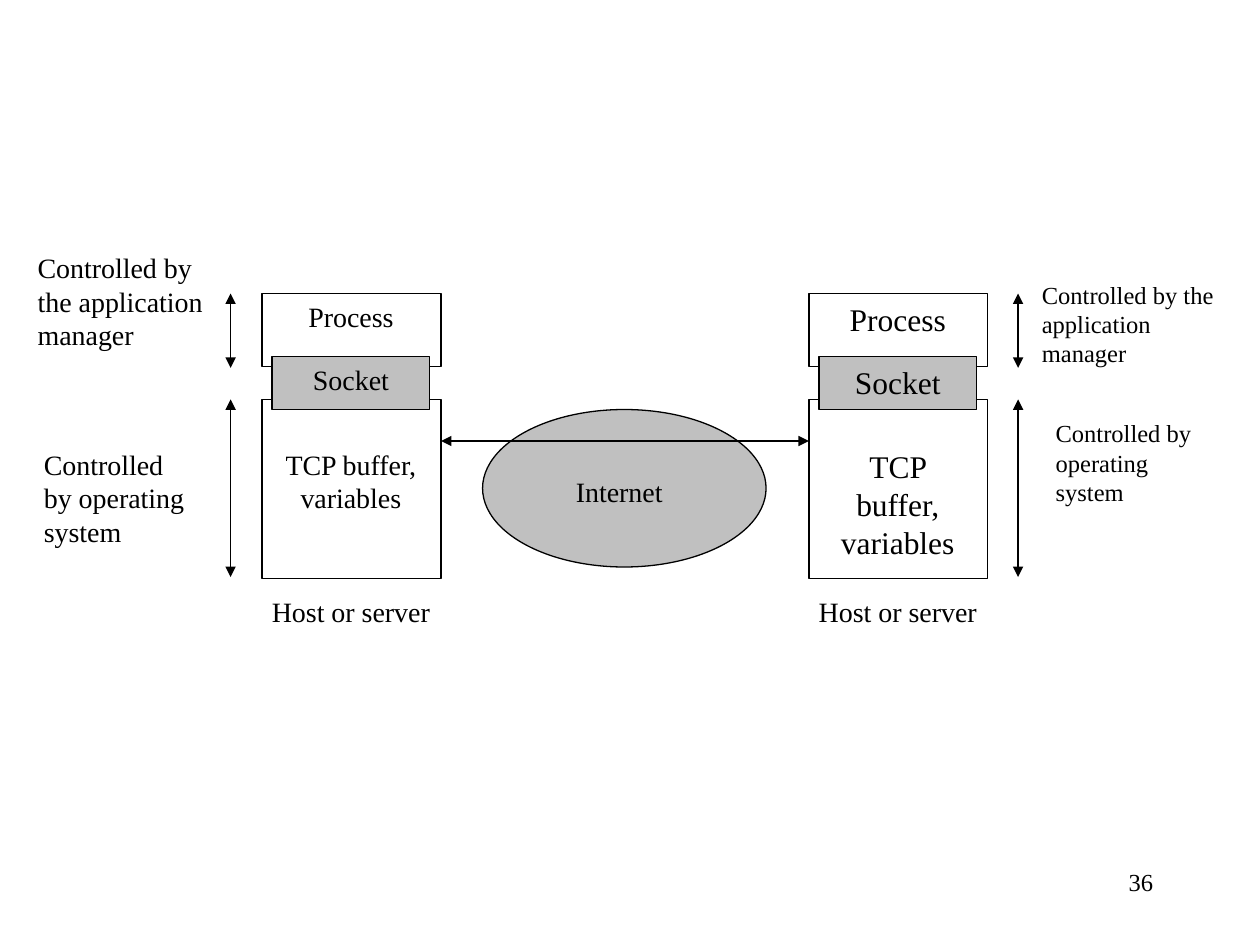
from lxml import etree
from pptx import Presentation
from pptx.dml.color import RGBColor
from pptx.enum import shapes, text
from pptx.oxml.ns import qn
from pptx.util import Inches, Pt

BLACK = "000000"
GRAY = "C0C0C0"
LEFT, CENTER, RIGHT = text.PP_ALIGN.LEFT, text.PP_ALIGN.CENTER, text.PP_ALIGN.RIGHT
RECTANGLE, OVAL = shapes.MSO_SHAPE.RECTANGLE, shapes.MSO_SHAPE.OVAL


def color(value):
    return RGBColor.from_string(value)


def add_outline(slide, kind, left, top, width, height, fill=None):
    outline = slide.shapes.add_shape(
        kind, Inches(left), Inches(top), Inches(width), Inches(height))
    outline.shadow.inherit = False
    if fill:
        outline.fill.solid()
        outline.fill.fore_color.rgb = color(fill)
    else:
        outline.fill.background()
    outline.line.color.rgb = color(BLACK)
    outline.line.width = Pt(0.75)


def add_label(slide, wording, left, top, width, height, size, align=LEFT):
    label = slide.shapes.add_textbox(
        Inches(left), Inches(top), Inches(width), Inches(height))
    frame = label.text_frame
    frame.word_wrap = True
    frame.text = wording
    paragraph = frame.paragraphs[0]
    paragraph.alignment = align
    paragraph.font.name = "Times New Roman"
    paragraph.font.size = Pt(size)
    paragraph.font.color.rgb = color(BLACK)


def add_double_arrow(slide, x1, y1, x2, y2):
    arrow = slide.shapes.add_connector(
        shapes.MSO_CONNECTOR.STRAIGHT, Inches(x1), Inches(y1), Inches(x2), Inches(y2))
    arrow.line.color.rgb = color(BLACK)
    arrow.line.width = Pt(0.75)
    line = arrow.line._get_or_add_ln()
    for end in ("a:headEnd", "a:tailEnd"):
        etree.SubElement(line, qn(end), type="triangle")
    etree.SubElement(arrow._element.spPr, qn("a:effectLst"))


def add_host(slide, left, size, range_x):
    inner = left + 0.08
    add_outline(slide, RECTANGLE, left, 3.17, 1.42, 1.42)
    add_outline(slide, RECTANGLE, left, 2.33, 1.42, 0.58)
    add_outline(slide, RECTANGLE, inner, 2.83, 1.25, 0.42, GRAY)
    for wording, top, height in (("TCP buffer, variables", 3.5, 0.9),
                                 ("Process", 2.33, 0.4),
                                 ("Socket", 2.83, 0.4)):
        add_label(slide, wording, inner, top, 1.25, height, size, CENTER)
    add_label(slide, "Host or server", left - 0.17, 4.67, 1.75, 0.37, 16, CENTER)
    for top, bottom in ((3.17, 4.58), (2.33, 2.92)):
        add_double_arrow(slide, range_x, top, range_x, bottom)


def main():
    deck = Presentation()
    deck.slide_width, deck.slide_height = Inches(10), Inches(7.5)
    slide = deck.slides.add_slide(deck.slide_layouts[6])

    add_host(slide, left=2.08, size=16, range_x=1.83)
    add_host(slide, left=6.42, size=18, range_x=8.08)

    application = "Controlled by the application manager"
    system = "Controlled by operating system"
    add_label(slide, application, 0.2, 1.94, 1.55, 0.9, 16)
    add_label(slide, system, 0.25, 3.5, 1.4, 0.9, 16)
    add_label(slide, application, 8.17, 2.17, 1.75, 0.8, 14)
    add_label(slide, system, 8.28, 3.27, 1.36, 0.8, 14)

    add_outline(slide, OVAL, 3.83, 3.25, 2.25, 1.25, GRAY)
    add_label(slide, "Internet", 4, 3.72, 1.83, 0.37, 16, CENTER)
    add_double_arrow(slide, 3.5, 3.5, 6.42, 3.5)

    add_label(slide, "36", 7.17, 6.83, 2.08, 0.5, 14, RIGHT)
    deck.save("out.pptx")


if __name__ == "__main__":
    main()
